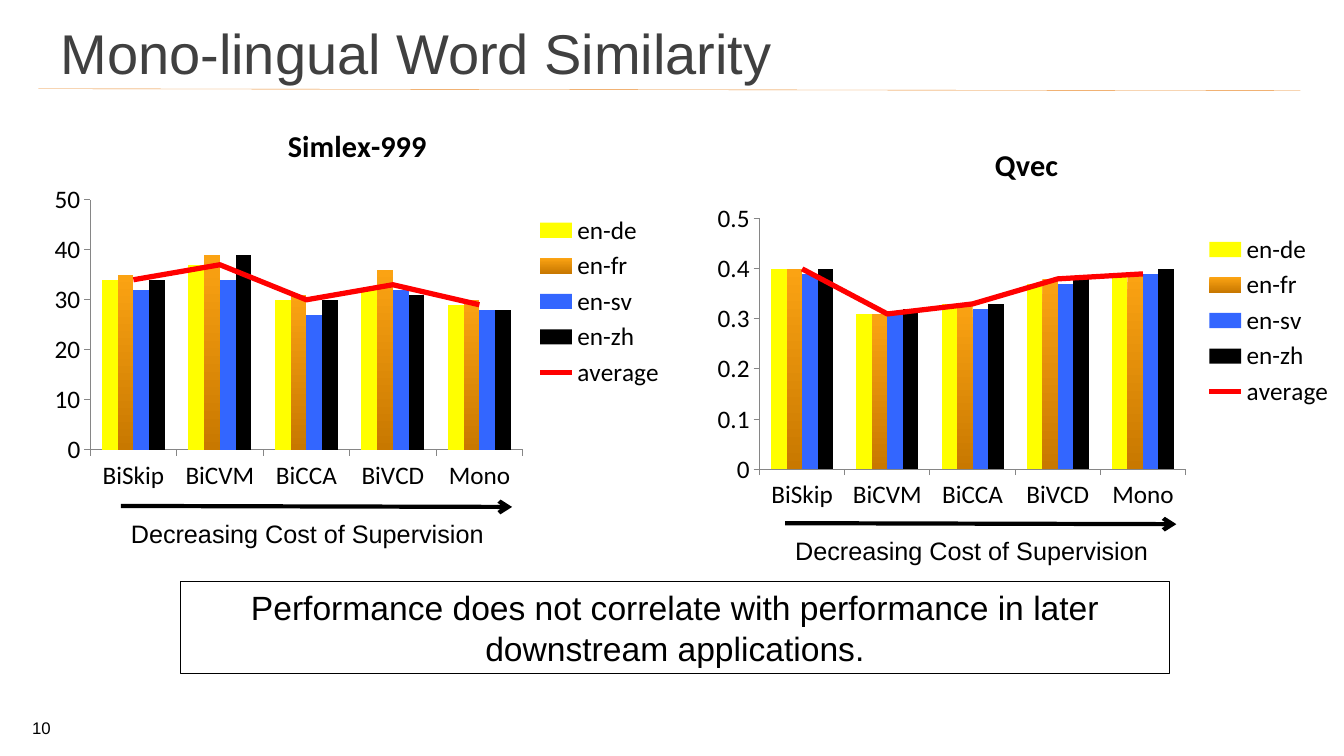
"""Build the mono-lingual word similarity slide with two combined charts."""
from lxml.etree import SubElement
from pptx import Presentation
from pptx.chart.data import CategoryChartData
from pptx.dml.color import RGBColor
from pptx.enum.chart import XL_CHART_TYPE, XL_LEGEND_POSITION, XL_MARKER_STYLE, XL_TICK_MARK
from pptx.enum.shapes import MSO_CONNECTOR, MSO_SHAPE
from pptx.enum.text import MSO_ANCHOR, MSO_AUTO_SIZE, PP_ALIGN
from pptx.oxml import parse_xml
from pptx.oxml.ns import nsdecls, qn
from pptx.util import Pt

TITLE = "Mono-lingual Word Similarity"
CONCLUSION = "Performance does not correlate with performance in later downstream applications."
ARROW_LABEL = "Decreasing Cost of Supervision"
PAGE_NUMBER = "10"
MODELS = ["BiSkip", "BiCVM", "BiCCA", "BiVCD", "Mono"]
SERIES_COLORS = {"en-de": "FFFF00", "en-fr": "FBA313", "en-sv": "3366FF",
                 "en-zh": "000000", "average": "FF0000"}
ORANGE_SHADE = "C87800"
AXIS_GRAY = "868686"
CHART_WIDTH, CHART_HEIGHT = 454.3, 279.4
CHARTS = [
    {"title": "Simlex-999", "left": 28.1, "top": 75.6, "maximum": 50, "step": 10,
     "plot": (0.08, 0.24, 0.68, 0.64), "arrow": (86.4, 361.4),
     "values": [(34, 37, 30, 32, 29), (35, 39, 31, 36, 30), (32, 34, 27, 32, 28),
                (34, 39, 30, 31, 28), (34, 37, 30, 33, 29)]},
    {"title": "Qvec", "left": 506.2, "top": 89.3, "maximum": 0.5, "step": 0.1,
     "plot": (0.08, 0.24, 0.67, 0.64), "arrow": (560.9, 373.7),
     "values": [(0.4, 0.31, 0.33, 0.37, 0.39), (0.4, 0.31, 0.33, 0.38, 0.39),
                (0.39, 0.31, 0.32, 0.37, 0.39), (0.4, 0.32, 0.33, 0.38, 0.4),
                (0.4, 0.31, 0.33, 0.38, 0.39)]},
]


def color(hex_string):
    return RGBColor.from_string(hex_string)


def format_font(font, size, name="Arial", hex_string="000000", bold=False):
    font.size, font.name, font.bold = Pt(size), name, bold
    font.color.rgb = color(hex_string)


def write_text(shape, text, size, alignment=PP_ALIGN.LEFT, hex_string="000000"):
    shape.text_frame.text = text
    paragraph = shape.text_frame.paragraphs[0]
    paragraph.alignment = alignment
    format_font(paragraph.runs[0].font, size, hex_string=hex_string)


def add_line(slide, start, end, hex_string, width, arrow=False):
    x1, y1, x2, y2 = (Pt(value) for value in (*start, *end))
    connector = slide.shapes.add_connector(MSO_CONNECTOR.STRAIGHT, x1, y1, x2, y2)
    connector.line.color.rgb = color(hex_string)
    connector.line.width = Pt(width)
    if arrow:
        SubElement(connector.line._get_or_add_ln(), qn("a:tailEnd"), type="arrow")
    SubElement(connector._element.spPr, qn("a:effectLst"))


def add_text_box(slide, box, text, size, alignment=PP_ALIGN.LEFT, wrap=False):
    text_box = slide.shapes.add_textbox(*(Pt(value) for value in box))
    text_box.text_frame.word_wrap = wrap
    write_text(text_box, text, size, alignment)
    return text_box


def move_average_to_line(chart):
    bar_chart = chart._chartSpace.find(".//" + qn("c:barChart"))
    average = bar_chart.findall(qn("c:ser"))[-1]
    for bar_setting in average.findall(qn("c:invertIfNegative")):
        average.remove(bar_setting)
    line_chart = parse_xml(
        f'<c:lineChart {nsdecls("c")}><c:grouping val="standard"/>'
        '<c:varyColors val="0"/><c:marker val="1"/></c:lineChart>')
    line_chart.insert(2, average)
    for axis in bar_chart.findall(qn("c:axId")):
        SubElement(line_chart, qn("c:axId"), val=axis.get("val"))
    bar_chart.addnext(line_chart)


def place_plot(chart, fractions):
    plot_area = chart._chartSpace.find(".//" + qn("c:plotArea"))
    for old_layout in plot_area.findall(qn("c:layout")):
        plot_area.remove(old_layout)
    layout = SubElement(plot_area, qn("c:layout"))
    plot_area.insert(0, layout)
    manual = SubElement(layout, qn("c:manualLayout"))
    settings = [("layoutTarget", "inner"), ("xMode", "edge"), ("yMode", "edge")]
    for name, value in settings + list(zip("xywh", fractions)):
        SubElement(manual, qn("c:" + name), val=str(value))


def color_series(chart):
    for series in chart.plots[0].series:
        fill = series.format.fill
        if series.name == "en-fr":
            fill.gradient()
            fill.gradient_angle = 270
            for stop, shade in zip(fill.gradient_stops, (SERIES_COLORS["en-fr"], ORANGE_SHADE)):
                stop.color.rgb = color(shade)
        else:
            fill.solid()
            fill.fore_color.rgb = color(SERIES_COLORS[series.name])
    average = chart.plots[1].series[0]
    average.smooth = False
    average.format.line.color.rgb = color(SERIES_COLORS["average"])
    average.format.line.width = Pt(3.75)
    average.marker.style = XL_MARKER_STYLE.NONE


def add_combined_chart(slide, details):
    data = CategoryChartData(number_format="General")
    data.categories = MODELS
    for name, values in zip(SERIES_COLORS, details["values"]):
        data.add_series(name, values)
    chart = slide.shapes.add_chart(
        XL_CHART_TYPE.COLUMN_CLUSTERED, Pt(details["left"]), Pt(details["top"]),
        Pt(CHART_WIDTH), Pt(CHART_HEIGHT), data).chart
    format_font(chart.font, 18, "Calibri")
    chart.has_title = True
    chart.chart_title.text_frame.text = details["title"]
    title_run = chart.chart_title.text_frame.paragraphs[0].runs[0]
    format_font(title_run.font, 21.6, "Calibri", bold=True)
    chart.has_legend = True
    chart.legend.position = XL_LEGEND_POSITION.RIGHT
    chart.legend.include_in_layout = False
    chart.plots[0].gap_width = 150
    chart.plots[0].overlap = 0
    chart.plots[0].vary_by_categories = False
    for axis in (chart.category_axis, chart.value_axis):
        axis.has_major_gridlines = False
        axis.major_tick_mark = XL_TICK_MARK.OUTSIDE
        axis.format.line.color.rgb = color(AXIS_GRAY)
        axis.format.line.width = Pt(0.75)
    chart.value_axis.minimum_scale = 0
    chart.value_axis.maximum_scale = details["maximum"]
    chart.value_axis.major_unit = details["step"]
    move_average_to_line(chart)
    place_plot(chart, details["plot"])
    color_series(chart)


def main():
    presentation = Presentation()
    presentation.slide_width, presentation.slide_height = Pt(960), Pt(540)
    slide = presentation.slides.add_slide(presentation.slide_layouts[5])

    add_line(slide, (27.4, 63.4), (928.8, 64.8), "EA8A2A", 0.25)
    title = slide.shapes.title
    title.left, title.top, title.width, title.height = Pt(36), Pt(16.6), Pt(835.9), Pt(41.8)
    title.text_frame.auto_size = MSO_AUTO_SIZE.NONE
    title.text_frame.vertical_anchor = MSO_ANCHOR.MIDDLE
    write_text(title, TITLE, 40, hex_string="404040")
    number = add_text_box(slide, (9.4, 512.6, 40.3, 18), PAGE_NUMBER, 12, PP_ALIGN.CENTER, True)
    number.text_frame.vertical_anchor = MSO_ANCHOR.BOTTOM

    for details in CHARTS:
        add_combined_chart(slide, details)
        left, top = details["arrow"]
        add_line(slide, (left, top), (left + 279.4, top + 0.7), "000000", 3, arrow=True)
        add_text_box(slide, (left, top + 5, 269.3, 28.8), ARROW_LABEL, 18)

    conclusion = slide.shapes.add_shape(
        MSO_SHAPE.RECTANGLE, Pt(128.9), Pt(415.4), Pt(706.3), Pt(65.5))
    conclusion.shadow.inherit = False
    conclusion.fill.background()
    conclusion.line.color.rgb = color("000000")
    conclusion.line.width = Pt(1)
    conclusion.text_frame.word_wrap = True
    write_text(conclusion, CONCLUSION, 24, PP_ALIGN.CENTER)
    presentation.save("out.pptx")


if __name__ == "__main__":
    main()
